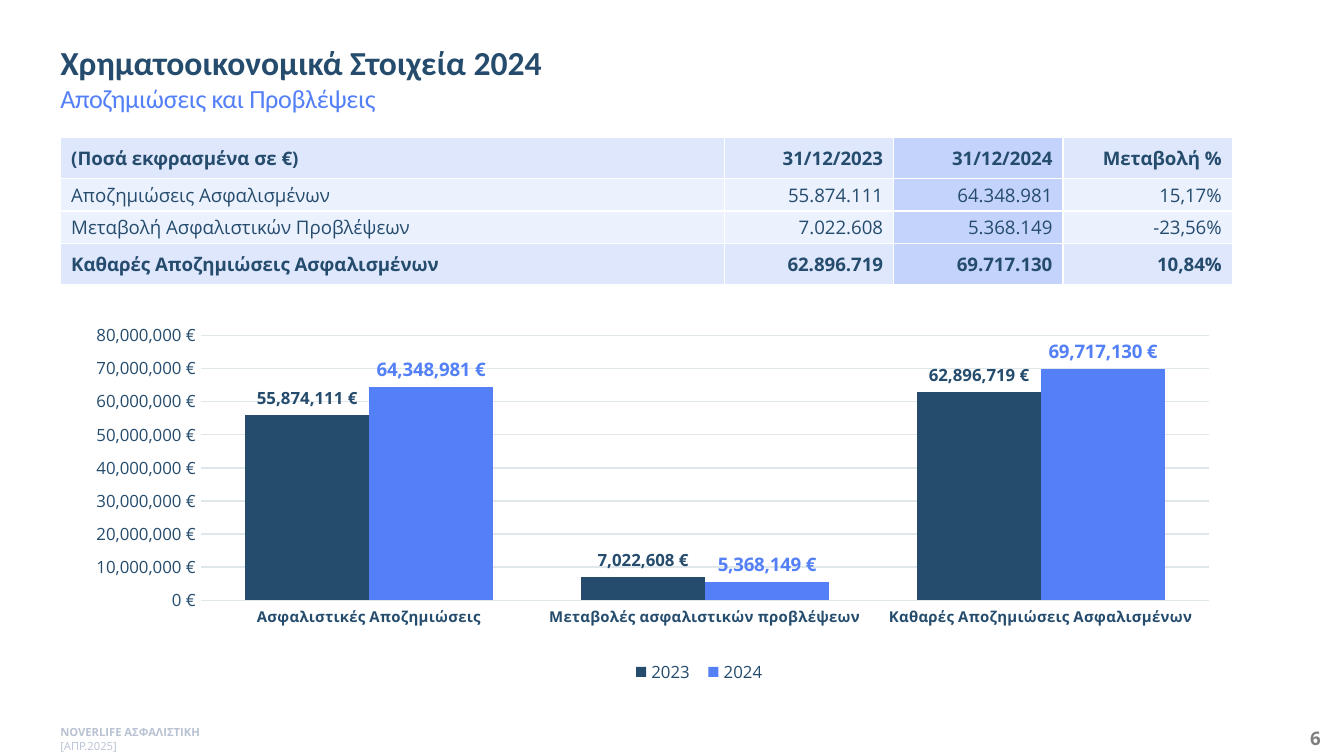
import lxml.etree
import pptx
import pptx.chart.data
import pptx.dml.color
import pptx.enum.chart
import pptx.enum.text
import pptx.oxml.ns
import pptx.util

Inches = pptx.util.Inches
Pt = pptx.util.Pt
RGBColor = pptx.dml.color.RGBColor
qn = pptx.oxml.ns.qn
Align = pptx.enum.text.PP_ALIGN
Anchor = pptx.enum.text.MSO_ANCHOR
AutoSize = pptx.enum.text.MSO_AUTO_SIZE

NAVY = RGBColor(0x25, 0x4C, 0x6D)
BLUE = RGBColor(0x54, 0x80, 0xF7)
GRAY = RGBColor(0x80, 0x80, 0x80)
FOOTER = RGBColor(0xB8, 0xC2, 0xD2)
GRID = RGBColor(0xE0, 0xE7, 0xEA)
STRONG = RGBColor(0xDF, 0xE7, 0xFD)
LIGHT = RGBColor(0xEC, 0xF1, 0xFE)
ACCENT = RGBColor(0xC4, 0xD3, 0xFC)
EURO = '#,##0\\ "€"'


def style(font, size, color=NAVY, bold=False, name="Open Sans"):
    font.size = Pt(size)
    font.color.rgb = color
    font.bold = bold
    font.name = name


def write(para, text, **look):
    span = para.add_run()
    span.text = text
    style(span.font, **look)
    return span


deck = pptx.Presentation()
deck.slide_width = Inches(10)
deck.slide_height = deck.slide_width * 9 // 16
page = deck.slides.add_slide(deck.slide_layouts[6])

title = page.shapes.add_textbox(Inches(0.35), Inches(0.21), Inches(6.69), Inches(0.39)).text_frame
title.word_wrap = True
title.margin_top = title.margin_bottom = Inches(0.1)
heading = title.paragraphs[0]
write(heading, "Χρηματοοικονομικά Στοιχεία 2024", size=18, bold=True, name="Calibri")
heading.add_line_break()
subtitle = write(heading, "Αποζημιώσεις και Προβλέψεις", size=14, color=BLUE, name="Calibri")
subtitle.font._element.set("spc", "-20")

number = page.shapes.add_textbox(Inches(9.65), Inches(5.36), Inches(0.28), Inches(0.27)).text_frame
number.word_wrap = False
number.auto_size = AutoSize.SHAPE_TO_FIT_TEXT
write(number.paragraphs[0], "6", size=10, color=GRAY, bold=True)

rows = [
    ("(Ποσά εκφρασμένα σε €)", "31/12/2023", "31/12/2024", "Μεταβολή %"),
    ("Αποζημιώσεις Ασφαλισμένων", "55.874.111", "64.348.981", "15,17%"),
    ("Μεταβολή Ασφαλιστικών Προβλέψεων", "7.022.608", "5.368.149", "-23,56%"),
    ("Καθαρές Αποζημιώσεις Ασφαλισμένων", "62.896.719", "69.717.130", "10,84%"),
]
table = page.shapes.add_table(4, 4, Inches(0.45), Inches(1.02), Inches(8.72), Inches(1.1)).table
for column, width in zip(table.columns, (4.94, 1.26, 1.26, 1.26)):
    column.width = Inches(width)
for row, height in zip(table.rows, (0.31, 0.24, 0.24, 0.31)):
    row.height = Inches(height)
for r, texts in enumerate(rows):
    outer = r in (0, 3)
    for c, text in enumerate(texts):
        cell = table.cell(r, c)
        cell.margin_left = cell.margin_right = Inches(0.08)
        cell.margin_top = cell.margin_bottom = 0
        cell.vertical_anchor = Anchor.MIDDLE
        para = cell.text_frame.paragraphs[0]
        para.alignment = Align.RIGHT if c else Align.LEFT
        write(para, text, size=10, bold=outer)
        properties = cell._tc.get_or_add_tcPr()
        for side in ("a:lnL", "a:lnR", "a:lnT", "a:lnB"):
            border = lxml.etree.SubElement(properties, qn(side), w=str(Pt(0.75)))
            fill = lxml.etree.SubElement(border, qn("a:solidFill"))
            lxml.etree.SubElement(fill, qn("a:srgbClr"), val="FFFFFF")
        cell.fill.solid()
        cell.fill.fore_color.rgb = ACCENT if c == 2 else STRONG if outer else LIGHT

footer = page.shapes.add_textbox(Inches(0.35), Inches(5.35), Inches(1.69), Inches(0.2)).text_frame
footer.word_wrap = False
footer.auto_size = AutoSize.SHAPE_TO_FIT_TEXT
write(footer.paragraphs[0], "NOVERLIFE ΑΣΦΑΛΙΣΤΙΚΗ  ", size=6, color=FOOTER, bold=True)
write(footer.paragraphs[0], "[ΑΠΡ.2025]", size=6, color=FOOTER)

data = pptx.chart.data.CategoryChartData(number_format=EURO)
data.categories = [
    "Ασφαλιστικές Αποζημιώσεις",
    "Μεταβολές ασφαλιστικών προβλέψεων",
    "Καθαρές Αποζημιώσεις Ασφαλισμένων",
]
data.add_series("2023", (55874111, 7022608, 62896719))
data.add_series("2024", (64348981, 5368149, 69717130))
chart = page.shapes.add_chart(
    pptx.enum.chart.XL_CHART_TYPE.COLUMN_CLUSTERED,
    Inches(0.45), Inches(2.12), Inches(8.72), Inches(3.13), data,
).chart
style(chart.font, 10)
chart.has_title = False
chart.has_legend = True
chart.legend.position = pptx.enum.chart.XL_LEGEND_POSITION.BOTTOM
chart.legend.include_in_layout = False
style(chart.legend.font, 9)

plot = chart.plots[0]
plot.gap_width = 71
plot.overlap = 0
plot.vary_by_categories = False
for series, color, size in zip(plot.series, (NAVY, BLUE), (9, 10)):
    series.format.fill.solid()
    series.format.fill.fore_color.rgb = color
    labels = series.data_labels
    labels.show_value = True
    labels.position = pptx.enum.chart.XL_LABEL_POSITION.OUTSIDE_END
    labels.number_format = EURO
    labels.number_format_is_linked = False
    style(labels.font, size, color, bold=True)

categories, values = chart.category_axis, chart.value_axis
for axis in (categories, values):
    axis.major_tick_mark = axis.minor_tick_mark = pptx.enum.chart.XL_TICK_MARK.NONE
style(categories.tick_labels.font, 8, bold=True)
style(values.tick_labels.font, 9)
values.minimum_scale = 0
values.maximum_scale = 80000000
values.major_unit = 10000000
values.tick_labels.number_format = EURO
values.tick_labels.number_format_is_linked = False
values.format.line.fill.background()
for line in (categories.format.line, values.major_gridlines.format.line):
    line.color.rgb = GRID
    line.width = Pt(0.75)

area = chart._chartSpace.chart.plotArea
legend = chart.legend._element
placements = (
    (area, 0, {"layoutTarget": "inner"}, (0.12, 0.12, 0.86, 0.63)),
    (legend, 1, {}, (0.48, 0.88, 0.13, 0.08)),
)
for part, index, settings, bounds in placements:
    for layout in part.findall(qn("c:layout")):
        part.remove(layout)
    layout = lxml.etree.Element(qn("c:layout"))
    part.insert(index, layout)
    manual = lxml.etree.SubElement(layout, qn("c:manualLayout"))
    settings = {**settings, "xMode": "edge", "yMode": "edge", **dict(zip("xywh", bounds))}
    for tag, value in settings.items():
        lxml.etree.SubElement(manual, qn("c:" + tag), val=str(value))

deck.save("out.pptx")
